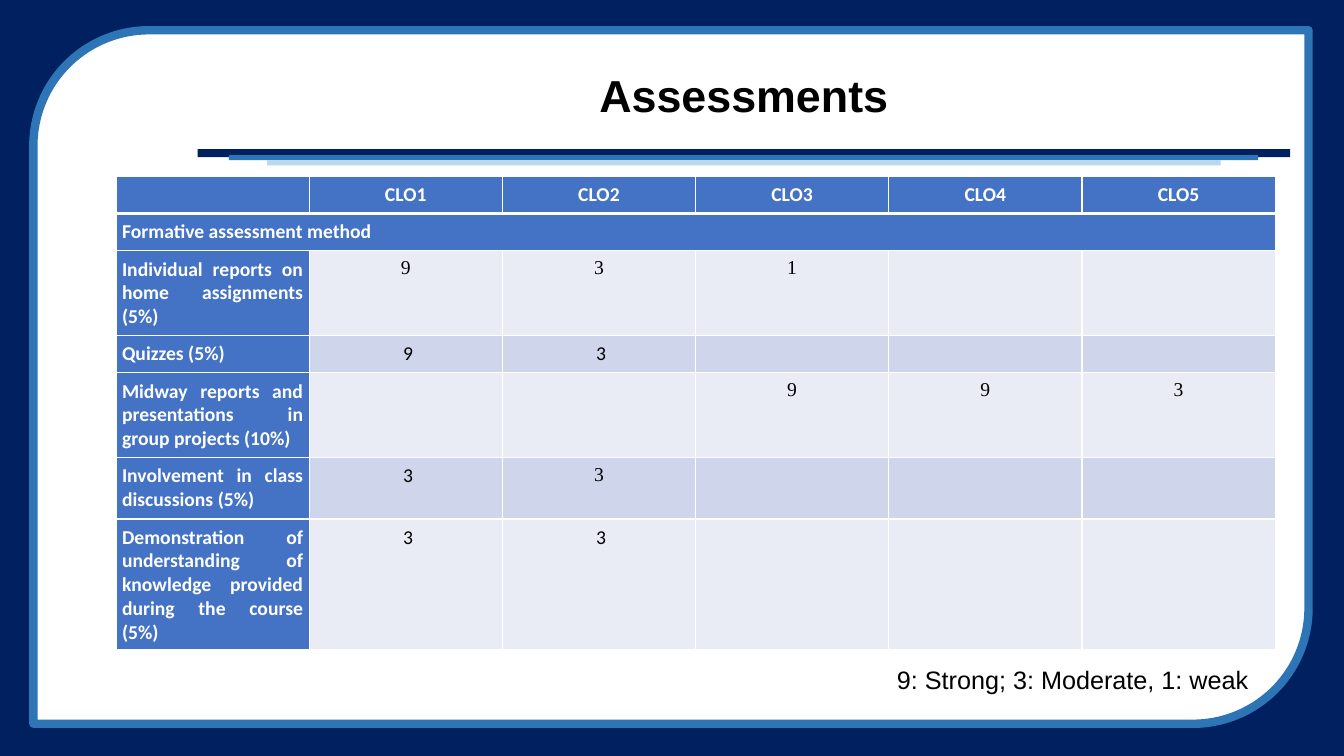
import dataclasses

import lxml.etree
import pptx
import pptx.dml.color
import pptx.enum.shapes
import pptx.enum.text
import pptx.oxml.ns
import pptx.util

ALIGN = pptx.enum.text.PP_ALIGN
SHAPE = pptx.enum.shapes.MSO_SHAPE
MIDDLE = pptx.enum.text.MSO_ANCHOR.MIDDLE
SLIDE_WIDTH = pptx.util.Inches(13.333)
SLIDE_HEIGHT = pptx.util.Inches(7.5)


@dataclasses.dataclass(frozen=True)
class Theme:
    navy: str = "002060"
    blue: str = "2E75B6"
    pale_blue: str = "BDD7EE"
    white: str = "FFFFFF"
    black: str = "000000"
    header: str = "4472C4"
    bands: tuple = ("E9EBF5", "CFD5EA")
    sans: str = "Arial"
    body: str = "Calibri"
    serif: str = "Times New Roman"
    title_size: int = 32
    note_size: int = 18
    table_size: int = 14


THEME = Theme()
HEADINGS = ["", "CLO1", "CLO2", "CLO3", "CLO4", "CLO5"]
SECTION = "Formative assessment method "
# Scores with a leading space are set in the body font, the others in serif
METHODS = [
    ("Individual reports on home assignments (5%)", "9", "3", "1", "", ""),
    ("Quizzes (5%)", " 9", " 3", "", "", ""),
    ("Midway reports and presentations in group projects (10%)", "", "", "9", "9", "3"),
    ("Involvement in class discussions (5%)", " 3", "3", "", "", ""),
    ("Demonstration of understanding of knowledge provided during the course (5%)",
     " 3", " 3", "", "", ""),
]
ROW_HEIGHTS = [0.37, 0.37, 0.84, 0.37, 0.84, 0.61, 1.3]
# Left, top, width and height as percent of the slide
STRIPES = [
    ((14.7, 19.73, 81.3, 1.07), THEME.navy),
    ((17.03, 20.53, 76.58, 0.67), THEME.blue),
    ((19.88, 21.2, 70.95, 0.67), THEME.pale_blue),
]


def color(value):
    return pptx.dml.color.RGBColor.from_string(value)


def place(left, top, width, height):
    """Turn percentages of the slide into lengths."""
    return [int(share * side / 100) for share, side in
            ((left, SLIDE_WIDTH), (top, SLIDE_HEIGHT),
             (width, SLIDE_WIDTH), (height, SLIDE_HEIGHT))]


def apply(target, formats):
    for name, value in formats.items():
        setattr(target, name, value)


def write(text_frame, text, alignment, size, font, text_color, bold=False, **spacing):
    paragraph = text_frame.paragraphs[0]
    apply(paragraph, {"alignment": alignment, **spacing})
    run = paragraph.add_run()
    run.text = text
    apply(run.font, {"size": pptx.util.Pt(size), "name": font, "bold": bold})
    run.font.color.rgb = color(text_color)


def add_block(shapes, kind, box, fill, line=None, line_width=0):
    shape = shapes.add_shape(kind, *place(*box))
    shape.shadow.inherit = False
    shape.fill.solid()
    shape.fill.fore_color.rgb = color(fill)
    if line:
        shape.line.color.rgb = color(line)
        shape.line.width = pptx.util.Pt(line_width)
    else:
        shape.line.fill.background()
    return shape


def set_borders(cell, bottom_width):
    properties = cell._tc.get_or_add_tcPr()
    widths = {"lnL": 1, "lnR": 1, "lnT": 1, "lnB": bottom_width}
    for position, (side, width) in enumerate(widths.items()):
        line = lxml.etree.Element(pptx.oxml.ns.qn("a:" + side), w=str(pptx.util.Pt(width)))
        fill = lxml.etree.SubElement(line, pptx.oxml.ns.qn("a:solidFill"))
        lxml.etree.SubElement(fill, pptx.oxml.ns.qn("a:srgbClr"), val=THEME.white)
        properties.insert(position, line)


def fill_cell(cell, text, fill, alignment, font, text_color, bold, bottom_width=1):
    apply(cell, {"margin_left": pptx.util.Inches(0.06), "margin_right": pptx.util.Inches(0.06),
                 "margin_top": pptx.util.Pt(4.7), "margin_bottom": pptx.util.Pt(4.7)})
    cell.fill.solid()
    cell.fill.fore_color.rgb = color(fill)
    set_borders(cell, bottom_width)
    if text:
        write(cell.text_frame, text, alignment, THEME.table_size, font, text_color, bold,
              space_after=pptx.util.Pt(1))
    else:
        # Keep an empty cell as low as a filled one
        end = cell.text_frame.paragraphs[0]._p.get_or_add_endParaRPr()
        end.set("sz", str(THEME.table_size * 100))


def add_assessment_table(slide):
    rows = [HEADINGS, [SECTION] + [""] * (len(HEADINGS) - 1), *METHODS]
    box = place(8.63, 23.33, 86.25, 62.67)
    table = slide.shapes.add_table(len(rows), len(HEADINGS), *box).table
    for column in table.columns:
        column.width = box[2] // len(HEADINGS)
    for row, height in zip(table.rows, ROW_HEIGHTS):
        row.height = pptx.util.Inches(height)
    table.cell(1, 0).merge(table.cell(1, len(HEADINGS) - 1))

    for row_index, values in enumerate(rows):
        for column_index, text in enumerate(values):
            is_label = row_index < 2 or column_index == 0
            is_left = column_index == 0
            is_serif = not is_label and not text.startswith(" ")
            fill_cell(
                table.cell(row_index, column_index), text,
                fill=THEME.header if is_label else THEME.bands[row_index % 2],
                alignment=ALIGN.JUSTIFY if is_left else ALIGN.CENTER,
                font=THEME.serif if is_serif else THEME.body,
                text_color=THEME.white if is_label else THEME.black,
                bold=is_label,
                bottom_width=3 if row_index == 0 else 1)


def add_backdrop(slide):
    add_block(slide.shapes, SHAPE.RECTANGLE, (0, 0, 100, 100), THEME.navy)
    frame = add_block(slide.shapes, SHAPE.ROUND_2_DIAG_RECTANGLE, (2.48, 4, 94.88, 91.73),
                      THEME.white, THEME.blue, 6)
    frame.rotation = 180
    stripes = slide.shapes.add_group_shape()
    for box, fill in STRIPES:
        add_block(stripes.shapes, SHAPE.RECTANGLE, box, fill)


def add_title(slide):
    title = slide.shapes.title
    # Bring the title in front of the backdrop
    title._element.getparent().append(title._element)
    apply(title, dict(zip(("left", "top", "width", "height"), place(14.7, 6.53, 81.3, 12.93))))
    title.text_frame.vertical_anchor = MIDDLE
    write(title.text_frame, "Assessments", ALIGN.CENTER, THEME.title_size, THEME.sans,
          THEME.black, bold=True, line_spacing=0.9)


def add_scale_note(slide):
    note = slide.shapes.add_textbox(*place(66, 87.2, 34, 5.33))
    apply(note.text_frame, {"word_wrap": True, "vertical_anchor": MIDDLE})
    write(note.text_frame, "9: Strong; 3: Moderate, 1: weak", ALIGN.LEFT,
          THEME.note_size, THEME.sans, THEME.black)


def main():
    presentation = pptx.Presentation()
    apply(presentation, {"slide_width": SLIDE_WIDTH, "slide_height": SLIDE_HEIGHT})
    slide = presentation.slides.add_slide(presentation.slide_layouts[5])
    add_backdrop(slide)
    add_title(slide)
    add_scale_note(slide)
    add_assessment_table(slide)
    presentation.save("out.pptx")


if __name__ == "__main__":
    main()
